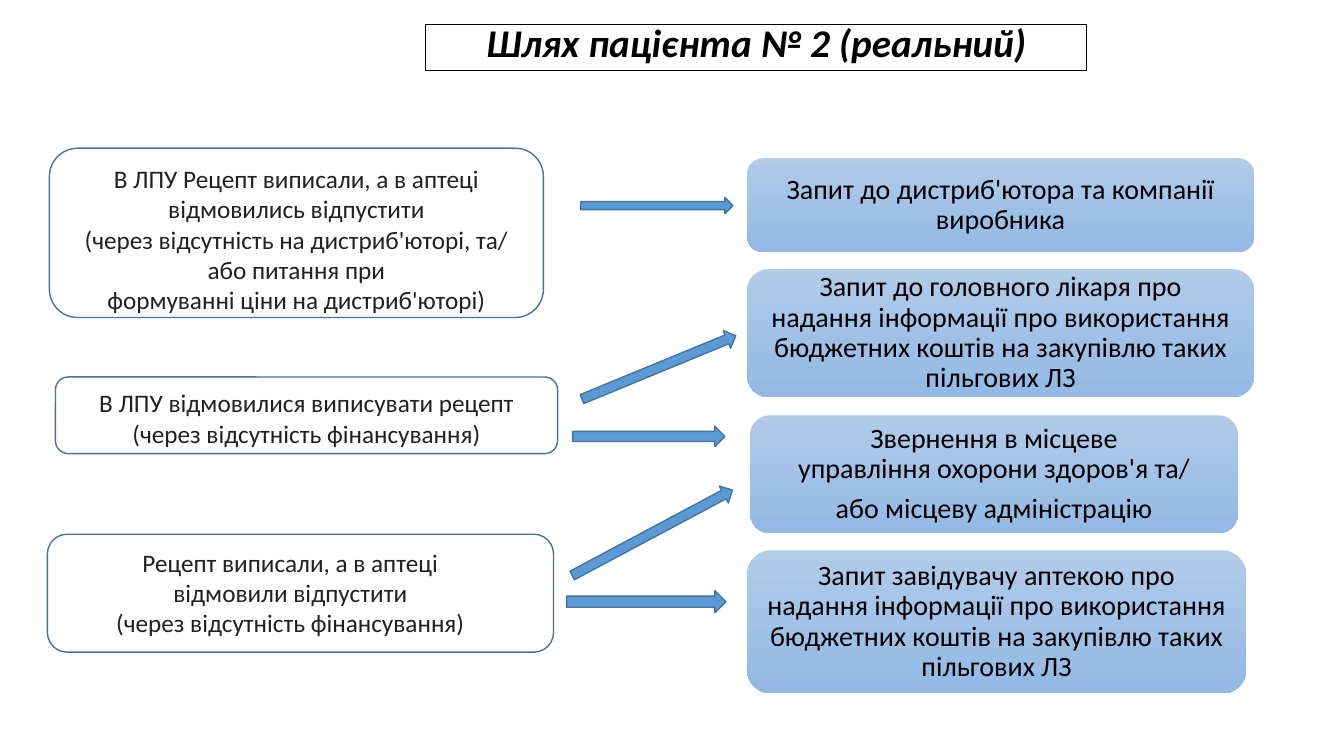
from pptx import Presentation
from pptx.dml.color import RGBColor
from pptx.enum import shapes, text
from pptx.util import Inches, Pt

COLORS = {
    "outline": "43739E", "arrow": "5B9BD5", "black": "000000",
    "situation": "212121", "top": "B1CBE9", "bottom": "93B9E4",
}
FONT = "Calibri"
TITLE = ("Шлях пацієнта № 2 (реальний)", (4.22, 0.24, 6.56, 0.46))

SITUATIONS = [
    ((0.49, 1.47, 4.9, 1.68), 0.1, [
        ["В ЛПУ Рецепт виписали, а в аптеці"],
        ["відмовились відпустити", "(через відсутність на дистриб'юторі, та/",
         "або питання при", "формуванні ціни на дистриб'юторі)"],
    ]),
    ((0.55, 3.74, 4.98, 0.76), 0.1, [
        ["В ЛПУ відмовилися виписувати рецепт", "(через відсутність фінансування)"],
    ]),
    ((0.47, 5.3, 5.02, 1.17), 0.3, [
        ["Рецепт виписали, а в аптеці"],
        ["відмовили відпустити", "(через відсутність фінансування)"],
    ]),
]

ACTIONS = [
    ((7.41, 1.57, 5.03, 0.93), [
        ["Запит до дистриб'ютора та компанії", "виробника"],
    ]),
    ((7.41, 2.67, 5.03, 1.27), [
        ["Запит до головного лікаря про", "надання інформації про використання",
         "бюджетних коштів на закупівлю таких", "пільгових ЛЗ"],
    ]),
    ((7.44, 4.12, 4.84, 1.17), [
        ["Звернення в місцеве", "управління охорони здоров'я та/"],
        ["або місцеву адміністрацію"],
    ]),
    ((7.41, 5.46, 4.95, 1.42), [
        ["Запит завідувачу аптекою про", "надання інформації про використання",
         "бюджетних коштів на закупівлю таких", "пільгових ЛЗ"],
    ]),
]

ARROWS = [
    ((5.76, 1.96, 1.51, 0.16), 0),
    ((5.71, 3.55, 1.65, 0.19), 337.6),
    ((5.68, 4.23, 1.51, 0.2), 0),
    ((5.57, 5.19, 1.8, 0.19), 331.9),
    ((5.62, 5.86, 1.58, 0.22), 0),
]


def color(name):
    return RGBColor.from_string(COLORS[name])


def add_box(page, kind, place, line=None, width=1):
    box = page.shapes.add_shape(kind, *map(Inches, place))
    box.shadow.inherit = False
    box.fill.background()
    if line:
        box.line.color.rgb = color(line)
        box.line.width = Pt(width)
    else:
        box.line.fill.background()
    return box


def write(box, paragraphs, size, ink, anchor, spacing=1.0, after=0, bold=False):
    frame = box.text_frame
    frame.word_wrap = True
    frame.vertical_anchor = anchor
    for index, lines in enumerate(paragraphs):
        para = frame.paragraphs[0] if index == 0 else frame.add_paragraph()
        for number, line in enumerate(lines):
            if number:
                para.add_line_break()
            para.add_run().text = line
        para.alignment = text.PP_ALIGN.CENTER
        para.line_spacing = spacing
        para.space_after = Pt(after)
        para.font.name = FONT
        para.font.size = Pt(size)
        para.font.color.rgb = color(ink)
        para.font.bold = para.font.italic = bold


def main():
    deck = Presentation()
    deck.slide_width, deck.slide_height = Inches(13.33), Inches(7.5)
    page = deck.slides.add_slide(deck.slide_layouts[6])
    kinds = shapes.MSO_SHAPE
    anchors = text.MSO_ANCHOR

    heading, place = TITLE
    title = add_box(page, kinds.RECTANGLE, place, "black", 0.75)
    write(title, [[heading]], 28, "black", anchors.BOTTOM, 0.9, bold=True)

    for place, right, paragraphs in SITUATIONS:
        box = add_box(page, kinds.ROUNDED_RECTANGLE, place, "outline")
        write(box, paragraphs, 18, "situation", anchors.TOP)
        box.text_frame.margin_top = Inches(0.07)
        box.text_frame.margin_right = Inches(right)

    for place, paragraphs in ACTIONS:
        box = add_box(page, kinds.ROUNDED_RECTANGLE, place)
        box.fill.gradient()
        box.fill.gradient_angle = 270
        for stop, name in zip(box.fill.gradient_stops, ("top", "bottom")):
            stop.color.rgb = color(name)
        write(box, paragraphs, 20, "black", anchors.MIDDLE, 0.9, 7)

    for place, angle in ARROWS:
        arrow = add_box(page, kinds.RIGHT_ARROW, place, "outline")
        arrow.fill.solid()
        arrow.fill.fore_color.rgb = color("arrow")
        arrow.rotation = angle

    deck.save("out.pptx")


if __name__ == "__main__":
    main()
